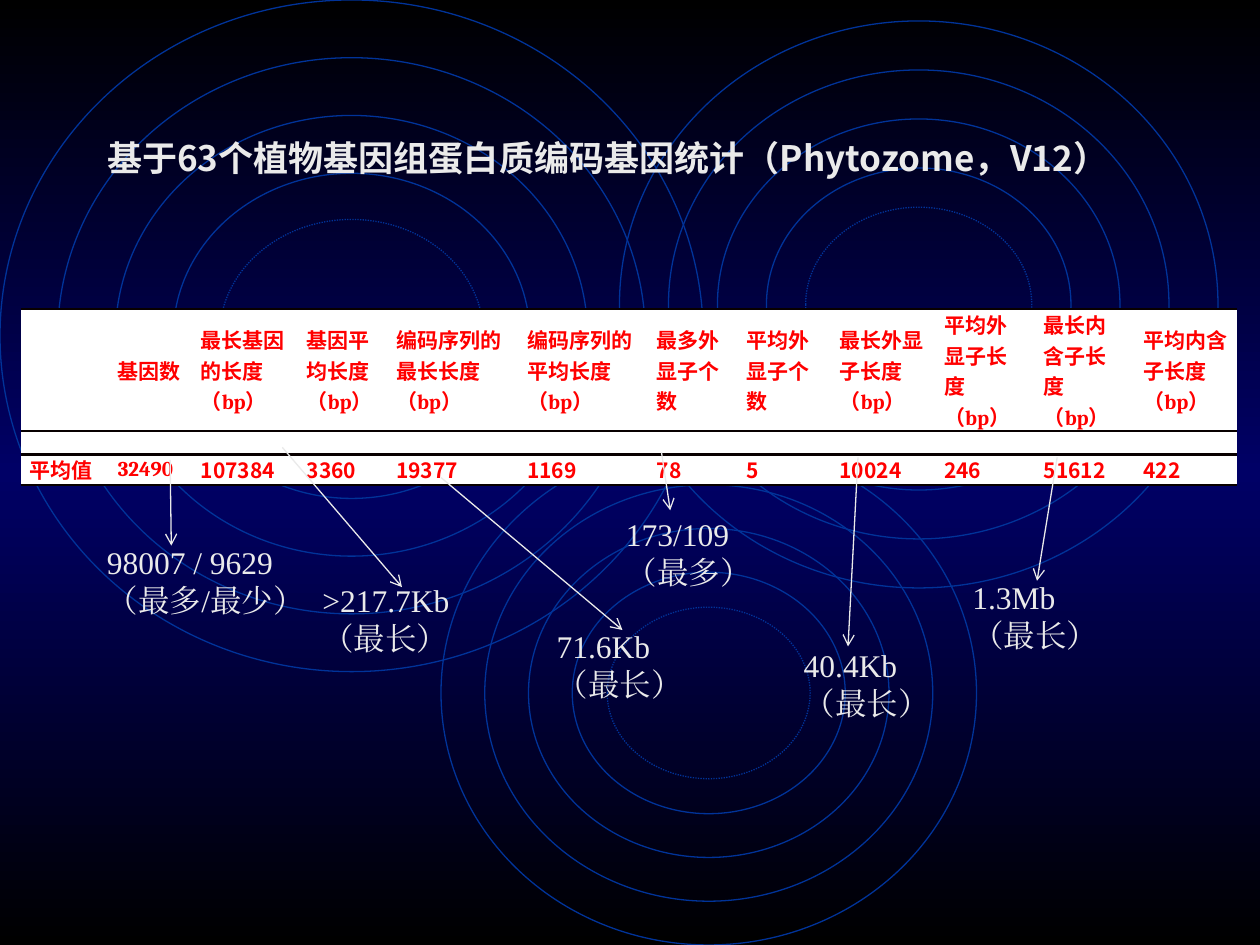
from copy import deepcopy

from lxml.etree import SubElement
from pptx import Presentation
from pptx.dml.color import RGBColor
from pptx.enum.dml import MSO_LINE_DASH_STYLE as Dash
from pptx.enum.shapes import MSO_CONNECTOR as Connector, MSO_SHAPE as Shape
from pptx.enum.text import MSO_ANCHOR as Anchor, MSO_AUTO_SIZE as AutoSize
from pptx.oxml import parse_xml
from pptx.oxml.ns import qn
from pptx.util import Pt

DRAWING_NS = "http://schemas.openxmlformats.org/drawingml/2006/main"


def color(hex_code):
    return RGBColor.from_string(hex_code)


class SlideBuilder:
    SANS, SERIF, NUMERIC = "Noto Sans CJK SC", "Times New Roman", "Cambria"
    TEXT, RING, RED, RULE, WHITE = "EAEAEA", "003399", "FF0000", "080000", "FFFFFF"

    def __init__(self, deck):
        self.page = deck.slides.add_slide(deck.slide_layouts[1])
        self.shapes = self.page.shapes

    def style(self, span, size, font, hex_code, bold=False):
        span.font.size, span.font.name, span.font.bold = Pt(size), font, bold
        span.font.color.rgb = color(hex_code)
        SubElement(span.font._element, qn("a:ea"), typeface=font)

    def background(self, edge, middle):
        fill = self.page.background.fill
        fill.gradient()
        fill.gradient_angle = 90
        first, last = fill.gradient_stops
        for stop, position in ((first, 0), (last, 1)):
            stop.color.rgb, stop.position = color(edge), position
        center = deepcopy(first._gs)
        center.set("pos", "50000")
        center.find(qn("a:srgbClr")).set("val", middle)
        first._gs.addnext(center)

    def rings(self, left, top, width, height, step):
        """Four solid rings, one step apart, and a dotted one inside."""
        for factor in (0, 1, 2, 3, 3.8):
            inset = factor * step
            ring = self.shapes.add_shape(
                Shape.OVAL, Pt(left + inset), Pt(top + inset),
                Pt(width - 2 * inset), Pt(height - 2 * inset))
            ring.shadow.inherit = False
            ring.fill.background()
            ring.line.color.rgb, ring.line.width = color(self.RING), Pt(0.75)
            if factor == 3.8:
                ring.line.dash_style = Dash.ROUND_DOT

    def heading(self, text, left, top, width, height):
        title, body = self.page.placeholders
        title._element.getparent().remove(title._element)
        body.left, body.top, body.width, body.height = map(Pt, (left, top, width, height))
        self.shapes._spTree.append(body._element)  # in front of the rings
        body.text_frame.text = text
        body.text_frame.auto_size = AutoSize.NONE
        para = body.text_frame.paragraphs[0]
        properties = para._p.get_or_add_pPr()
        properties.set("marL", "0")
        properties.set("indent", "0")
        SubElement(properties, qn("a:buNone"))
        para.space_before, para.line_spacing = Pt(0), 0.8
        self.style(para.runs[0], 20, self.SANS, self.TEXT, True)

    def borders(self, cell, top, bottom):
        properties = cell._tc.get_or_add_tcPr()
        sides = (("lnL", 0), ("lnR", 0), ("lnT", top), ("lnB", bottom))
        for index, (tag, width) in enumerate(sides):
            paint = (f'<a:solidFill><a:srgbClr val="{self.RULE}"/></a:solidFill>'
                     if width else "<a:noFill/>")
            properties.insert(index, parse_xml(
                f'<a:{tag} xmlns:a="{DRAWING_NS}" w="{Pt(width)}">{paint}</a:{tag}>'))

    def cell(self, cell, text, rules):
        cell.fill.solid()
        cell.fill.fore_color.rgb = color(self.WHITE)
        cell.vertical_anchor = Anchor.MIDDLE
        cell.margin_left = cell.margin_right = Pt(5)
        cell.margin_top = cell.margin_bottom = 0
        self.borders(cell, *rules)
        para = cell.text_frame.paragraphs[0]
        for piece in filter(None, text.partition("bp")):
            span = para.add_run()
            span.text = piece
            font = self.NUMERIC if piece in ("bp", "32490") else self.SANS
            self.style(span, 12, font, self.RED, True)
        if not text:
            end = SubElement(para._p, qn("a:endParaRPr"), sz="1200")
            SubElement(end, qn("a:latin"), typeface=self.SERIF)

    def table(self, rows, widths, heights, rules, left, top, height):
        frame = self.shapes.add_table(len(rows), len(widths), Pt(left), Pt(top),
                                      Pt(sum(widths)), Pt(height))
        grid = frame.table
        grid.first_row = grid.horz_banding = False
        for column, width in zip(grid.columns, widths):
            column.width = Pt(width)
        for r, texts in enumerate(rows):
            grid.rows[r].height = Pt(heights[r])
            for c, text in enumerate(texts):
                self.cell(grid.cell(r, c), text, rules[r:r + 2])

    def note(self, lines, left, top, width, wrap=False):
        box = self.shapes.add_textbox(Pt(left), Pt(top), Pt(width), Pt(51))
        box.text_frame.text = "\n".join(lines)
        box.text_frame.word_wrap = wrap
        box.text_frame.auto_size = AutoSize.SHAPE_TO_FIT_TEXT
        for para in box.text_frame.paragraphs:
            self.style(para.runs[0], 18, self.SERIF, self.TEXT)

    def arrow(self, *ends):
        line = self.shapes.add_connector(Connector.STRAIGHT, *map(Pt, ends))
        line.line.color.rgb, line.line.width = color(self.TEXT), Pt(0.75)
        SubElement(line.line._get_or_add_ln(), qn("a:tailEnd"), type="arrow")
        SubElement(line._element.spPr, qn("a:effectLst"))


HEADERS = ["", "基因数", "最长基因的长度（bp）", "基因平均长度（bp）",
           "编码序列的最长长度（bp）", "编码序列的平均长度（bp）",
           "最多外显子个数", "平均外显子个数", "最长外显子长度（bp）",
           "平均外显子长度（bp）", "最长内含子长度（bp）", "平均内含子长度（bp）"]
MEANS = ["平均值", "32490", "107384", "3360", "19377", "1169",
         "78", "5", "10024", "246", "51612", "422"]
WIDTHS = [50.4, 47.5, 60.5, 51.1, 74.9, 74.2, 51.1, 53.3, 59.8, 56.9, 56.9, 58.3]

# Note lines, left, top, width, and the arrow from the table to the note
NOTES = [
    (("98007 / 9629", "（最多/最少）"), 54, 306.7, 127.4, (97.2, 262.8, 97.9, 311.8)),
    ((">217.7Kb", "（最长）"), 177.1, 328.3, 87.1, (161.3, 255.6, 229.7, 335.5)),
    (("71.6Kb", "（最长）"), 311, 355, 86.4, (252, 272.9, 355.7, 360)),
    (("1.3Mb", "（最长）"), 548.6, 326.9, 86.4, (604.1, 261.4, 592.6, 331.9)),
    (("40.4Kb", "（最长）"), 452.2, 365.8, 86.4, (490.3, 261.4, 484.6, 369.4)),
    (("173/109", "（最多）"), 350.6, 290.9, 86.4, (378, 258.5, 383, 291.6)),
]


def main():
    deck = Presentation()
    deck.slide_width, deck.slide_height = Pt(720), Pt(540)
    slide = SlideBuilder(deck)

    # Backdrop
    slide.background("000000", "000066")
    slide.rings(0, 0, 401.8, 383.8, 33)
    slide.rings(252, 252, 306, 288, 25)
    slide.rings(354, 12, 342, 324, 28)

    # Heading and statistics
    slide.heading("基于63个植物基因组蛋白质编码基因统计（Phytozome，V12）", 54, 79.2, 612, 324)
    slide.table([HEADERS, [""] * len(HEADERS), MEANS], WIDTHS, heights=(43.2, 13, 13),
                rules=(1.5, 1, 1.5, 1.5), left=11.9, top=176.7, height=85)

    # Extreme values
    for lines, left, top, width, ends in NOTES:
        slide.note(lines, left, top, width, wrap=width > 100)
        slide.arrow(*ends)

    deck.save("out.pptx")


if __name__ == "__main__":
    main()
